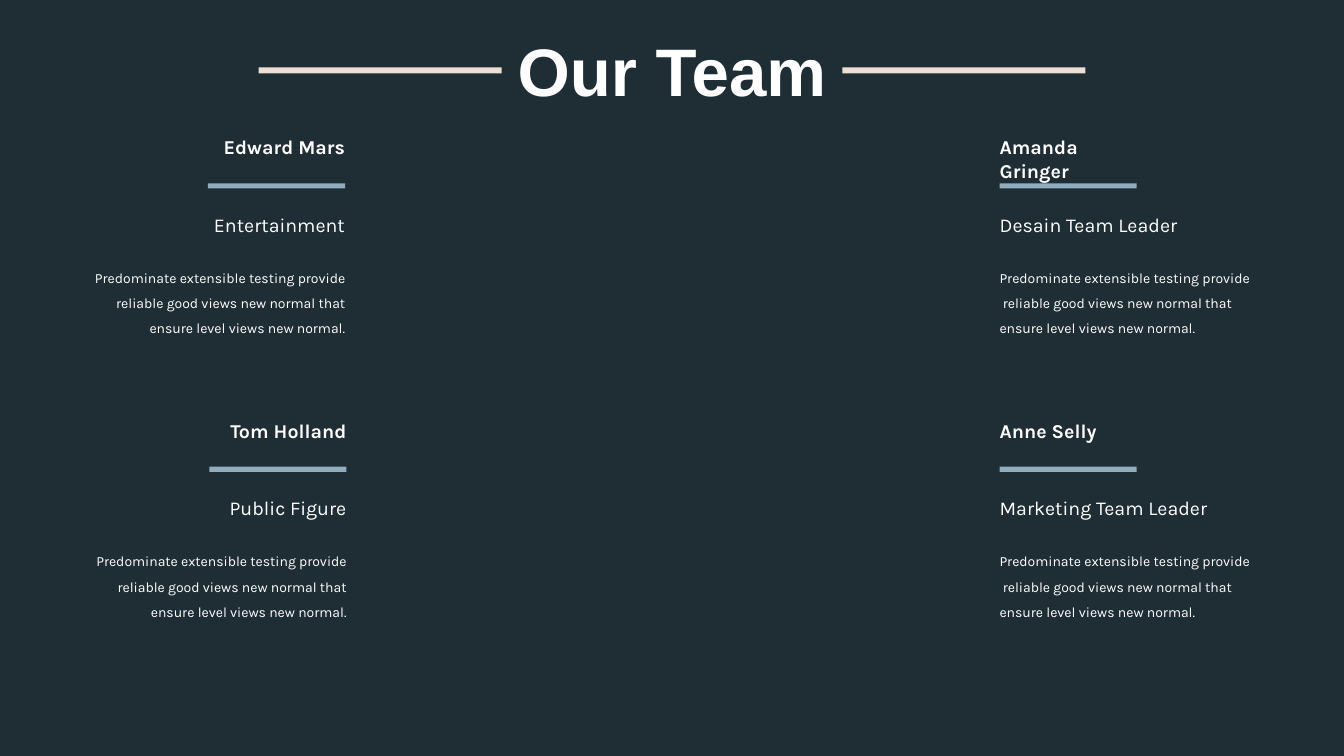
"""Build the team slide: a ruled title and four member cards."""
import pptx
import pptx.dml.color
import pptx.enum.shapes
import pptx.enum.text
import pptx.util

Pt = pptx.util.Pt
RGB = pptx.dml.color.RGBColor
ALIGN = pptx.enum.text.PP_ALIGN
ANCHOR = pptx.enum.text.MSO_ANCHOR

NIGHT = RGB(0x1F, 0x2D, 0x35)
CREAM = RGB(0xEC, 0xE0, 0xD4)
BLUE = RGB(0x91, 0xAC, 0xBD)
WHITE = RGB(0xFF, 0xFF, 0xFF)

BLURB = ("Predominate extensible testing provide  reliable good views "
         "new normal that ensure level views new normal.")
CARD_WIDTH = 180
LEFT, RIGHT = ALIGN.LEFT, ALIGN.RIGHT
TEAM = [
    ("Edward Mars", "Entertainment", 66.5, 96.5, RIGHT),
    ("Tom Holland", "Public Figure", 67.5, 298.9, RIGHT),
    ("Amanda Gringer", "Desain Team Leader", 714, 96.5, LEFT),
    ("Anne Selly", "Marketing Team Leader", 714, 298.9, LEFT),
]


def write(shapes, text, left, top, width, height, size=14, font="Karla",
          bold=False, align=LEFT, anchor=ANCHOR.TOP, lead=None):
    """Place a text box without margins."""
    box = shapes.add_textbox(Pt(left), Pt(top), Pt(width), Pt(height))
    frame = box.text_frame
    frame.margin_left = frame.margin_right = 0
    frame.margin_top = frame.margin_bottom = 0
    frame.word_wrap = True
    frame.auto_size = pptx.enum.text.MSO_AUTO_SIZE.SHAPE_TO_FIT_TEXT
    frame.vertical_anchor = anchor
    line = frame.paragraphs[0]
    line.alignment = align
    line.line_spacing = lead
    run = line.add_run()
    run.text = text
    run.font.name = font
    run.font.size = Pt(size)
    run.font.bold = bold
    run.font.color.rgb = WHITE


def draw_bar(shapes, left, top, width, height, fill):
    """Draw a plain filled bar."""
    bar = shapes.add_shape(pptx.enum.shapes.MSO_SHAPE.RECTANGLE,
                           Pt(left), Pt(top), Pt(width), Pt(height))
    bar.shadow.inherit = False
    bar.fill.solid()
    bar.fill.fore_color.rgb = fill
    bar.line.fill.background()


def add_title(shapes, left, top, width, height):
    """Set the title between two bars that end at the box edges."""
    bar = 173.5
    for start in (left, left + width - bar):
        draw_bar(shapes, start, top + 27.1, bar, 4.3, CREAM)
    write(shapes, "Our Team", left + bar, top, width - 2 * bar, height,
          size=48, font="Arial", bold=True, align=ALIGN.CENTER,
          anchor=ANCHOR.MIDDLE)


def add_card(shapes, name, role, left, top, width, align):
    """Stack name, bar, role and blurb against one side of the box."""
    def start(part):
        """Return the left edge of a part of the given width."""
        return left + width - part if align == RIGHT else left

    card = shapes.add_group_shape().shapes
    write(card, name, start(90), top, 90, 17, bold=True, align=align)
    draw_bar(card, start(98), top + 34.4, 98, 3.7, BLUE)
    write(card, role, start(156), top + 55.5, 156, 17, align=align)
    write(card, BLURB, left, top + 90, width, 55, size=10, align=align,
          lead=1.5)


def main():
    """Build and save the slide."""
    deck = pptx.Presentation()
    deck.slide_width, deck.slide_height = Pt(960), Pt(540)
    slide = deck.slides.add_slide(deck.slide_layouts[6])
    slide.background.fill.solid()
    slide.background.fill.fore_color.rgb = NIGHT
    add_title(slide.shapes, 184.8, 21, 590.4, 58)
    for name, role, left, top, align in TEAM:
        add_card(slide.shapes, name, role, left, top, CARD_WIDTH, align)
    deck.save("out.pptx")


if __name__ == "__main__":
    main()
